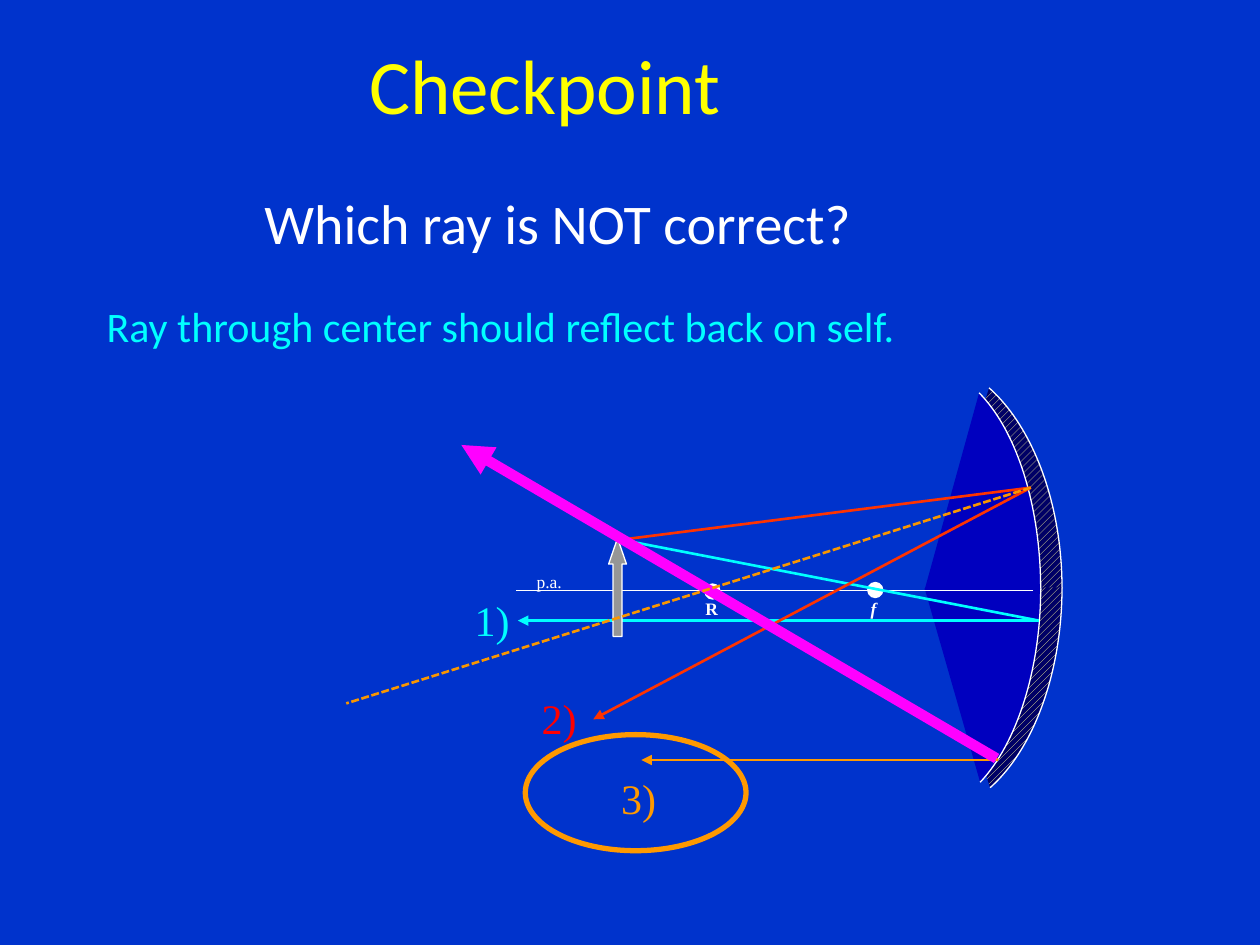
from copy import deepcopy

from lxml import etree
from pptx import Presentation
from pptx.dml.color import RGBColor
from pptx.enum.dml import MSO_LINE, MSO_PATTERN
from pptx.enum.shapes import MSO_CONNECTOR, MSO_SHAPE
from pptx.enum.text import MSO_AUTO_SIZE
from pptx.oxml.ns import qn
from pptx.util import Cm, Pt

STRAIGHT = MSO_CONNECTOR.STRAIGHT
OVAL = MSO_SHAPE.OVAL
ARROW = MSO_SHAPE.UP_ARROW
HATCH = MSO_PATTERN.WIDE_UPWARD_DIAGONAL
DASH = MSO_LINE.SQUARE_DOT
FIT = MSO_AUTO_SIZE.SHAPE_TO_FIT_TEXT

BLUE = RGBColor(0x00, 0x33, 0xCC)
DEEP = RGBColor(0x00, 0x00, 0xBF)
NAVY = RGBColor(0x00, 0x00, 0x66)
CREAM = RGBColor(0xFF, 0xFF, 0x99)
WHITE = RGBColor(0xFF, 0xFF, 0xFF)
GRAY = RGBColor(0x96, 0x96, 0x96)
CYAN = RGBColor(0x00, 0xFF, 0xFF)
RED = RGBColor(0xFF, 0x00, 0x00)
SCARLET = RGBColor(0xFF, 0x33, 0x00)
ORANGE = RGBColor(0xFF, 0x99, 0x00)
AMBER = RGBColor(0xF9, 0x96, 0x00)
PINK = RGBColor(0xFF, 0x00, 0xFF)
YELLOW = RGBColor(0xFF, 0xFF, 0x00)
SERIF, SANS = "Times New Roman", "Calibri"

deck = Presentation()
deck.slide_width, deck.slide_height = Cm(25.4), Cm(19.05)
slide = deck.slides.add_slide(deck.slide_layouts[6])
slide.background.fill.solid()
slide.background.fill.fore_color.rgb = BLUE
shapes = slide.shapes


def add_ray(points, color, width=1.5, arrow=True):
    """Join the points with lines; the last one may end in an arrowhead."""
    for start, end in zip(points, points[1:]):
        ray = shapes.add_connector(STRAIGHT, *map(Cm, start + end))
        ray.line.color.rgb = color
        ray.line.width = Pt(width)
        etree.SubElement(ray._element.spPr, qn("a:effectLst"))
    if arrow:
        tip = etree.SubElement(ray.line._get_or_add_ln(), qn("a:tailEnd"))
        tip.set("type", "triangle")
    return ray


def add_text(words, box, size, face, color, wrap=True):
    """Place one line of text and return its font."""
    frame = shapes.add_textbox(*map(Cm, box)).text_frame
    frame.word_wrap = wrap
    frame.auto_size = FIT
    para = frame.paragraphs[0]
    para.text = words
    para.font.size, para.font.name = Pt(size), face
    para.font.color.rgb = color
    return para.font


# Mirror: two hatched outer quarters, then two plain inner ones
# (apex, then start, two handles and end of the curve)
quarters = [
    (18.67, [(19.94, 7.82), (20.83, 8.61), (21.41, 10.16), (21.41, 11.86)]),
    (18.67, [(19.96, 15.88), (20.85, 15.09), (21.41, 13.54), (21.41, 11.84)]),
    (18.64, [(19.74, 7.92), (20.5, 8.69), (20.98, 10.21), (20.98, 11.89)]),
    (18.64, [(19.76, 15.77), (20.5, 14.99), (20.98, 13.49), (20.98, 11.86)]),
]
for order, (apex, knots) in enumerate(quarters):
    curve = [(Cm(x), Cm(y)) for x, y in knots]
    start, end = curve[0], curve[-1]
    pen = shapes.build_freeform(*start)
    pen.add_line_segments([end, (Cm(apex), end[1])], close=True)
    part = pen.convert_to_shape()
    part.shadow.inherit = False
    part.line.color.rgb = WHITE
    part.line.width = Pt(0.75)
    if order < 2:
        part.fill.patterned()
        part.fill.pattern = HATCH
        part.fill.fore_color.rgb = CREAM
        part.fill.back_color.rgb = NAVY
    else:
        part.fill.solid()
        part.fill.fore_color.rgb = DEEP

    # Bend the first side, then split into a bare arc and a bare sector
    sector = part._element.find(".//" + qn("a:path"))
    bend = etree.Element(qn("a:cubicBezTo"))
    for x, y in curve[1:]:
        point = etree.SubElement(bend, qn("a:pt"))
        point.set("x", str(x - part.left))
        point.set("y", str(y - part.top))
    sector.replace(sector[1], bend)
    arc = deepcopy(sector)
    for side in arc[2:]:
        arc.remove(side)
    arc.set("fill", "none")
    sector.set("stroke", "0")
    sector.addprevious(arc)

# Principal axis with centre and focus
add_ray([(20.83, 11.9), (10.41, 11.9)], WHITE, 0.75, arrow=False)
for x, y in ((14.2, 11.76), (17.48, 11.73)):
    dot = shapes.add_shape(OVAL, Cm(x), Cm(y), Cm(0.33), Cm(0.33))
    dot.shadow.inherit = False
    dot.fill.solid()
    dot.fill.fore_color.rgb = WHITE
    dot.line.fill.background()
add_text("R", (13.97, 11.94, 0.76, 0.69), 10, SERIF, WHITE, False).bold = True
focus = add_text("f", (17.3, 11.94, 0.64, 0.69), 10, SERIF, WHITE, False)
focus.bold = focus.italic = True

# Three rays from the tip of the object, with their numbers
top = (12.52, 10.88)
add_ray([top, (20.94, 12.51), (10.44, 12.51)], CYAN)
add_ray([top, (20.78, 9.83), (11.96, 14.5)], SCARLET)
add_ray([top, (20.12, 15.32), (12.93, 15.32)], ORANGE)
add_text("1)", (9.32, 11.86, 1.22, 1.27), 24, SERIF, CYAN, False)
add_text("2)", (10.67, 13.84, 1.22, 1.27), 24, SERIF, RED, False)
add_text("3)", (12.27, 15.44, 1.37, 1.27), 24, SERIF, ORANGE)
add_text("p.a.", (10.57, 11.38, 1.02, 0.69), 10, SERIF, WHITE, False)

# Object
thing = shapes.add_shape(ARROW, Cm(12.27), Cm(10.85), Cm(0.36), Cm(1.98))
thing.adjustments[0], thing.adjustments[1] = 0.5, 1.45
thing.shadow.inherit = False
thing.fill.solid()
thing.fill.fore_color.rgb = GRAY
thing.line.color.rgb = WHITE
thing.line.width = Pt(0.75)

# Title
add_text("Checkpoint", (7.19, 0.64, 10.8, 2.11), 44, SANS, YELLOW)

# Answer: ray back on itself, ring round the wrong one
add_ray([(20.09, 15.29), (9.3, 8.97)], PINK, 6)
ring = shapes.add_shape(OVAL, Cm(10.59), Cm(14.81), Cm(4.45), Cm(2.34))
ring.shadow.inherit = False
ring.fill.background()
ring.line.color.rgb = ORANGE
ring.line.width = Pt(3)
add_text("Ray through center should reflect back on self.",
         (1.9, 5.93, 21.39, 1.27), 24, SANS, CYAN)

# Question
add_text("Which ray is NOT correct?", (5.08, 3.68, 15.67, 1.6), 32, SANS, WHITE)

# Normal through the centre
normal = add_ray([(20.78, 9.83), (6.98, 14.18)], AMBER, arrow=False)
normal.line.dash_style = DASH

deck.save("out.pptx")
